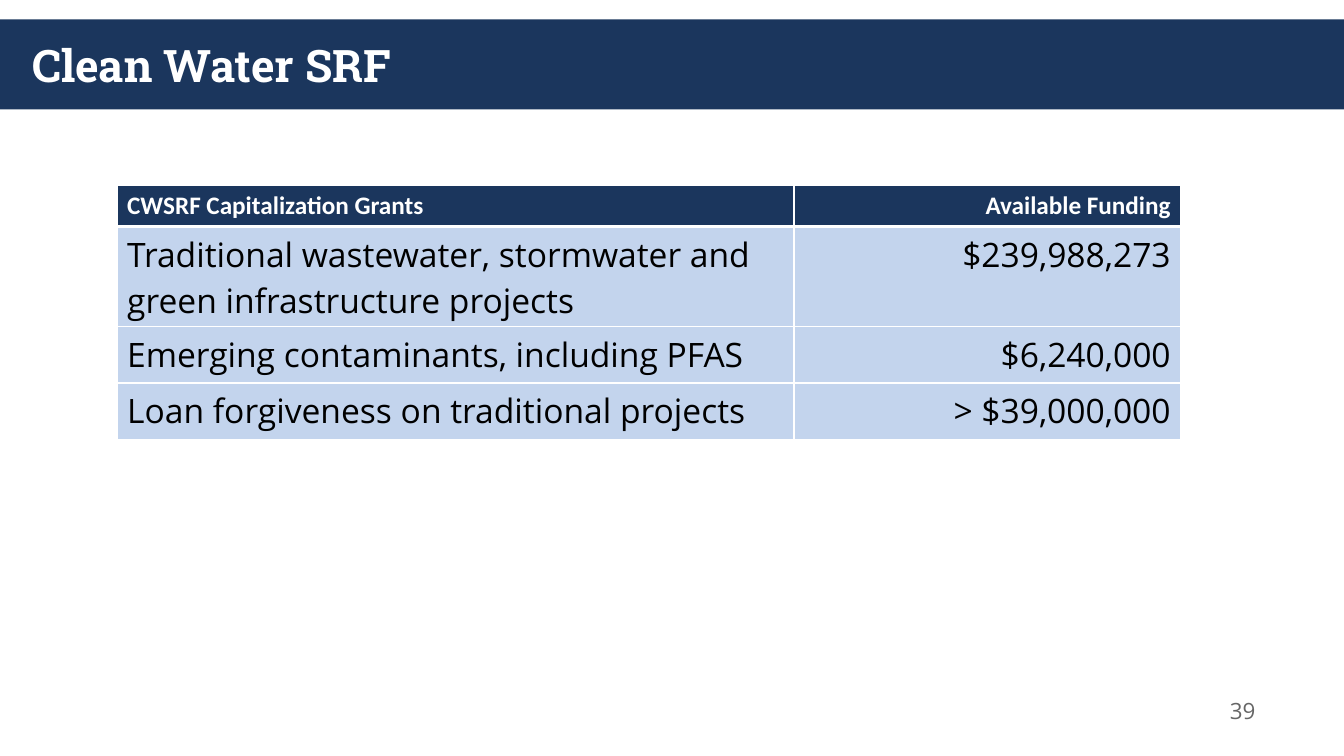
"""Build the Clean Water SRF funding slide."""
from lxml import etree
from pptx import Presentation
from pptx.dml.color import RGBColor
from pptx.enum.shapes import MSO_SHAPE
from pptx.enum.text import MSO_ANCHOR as ANCHOR, PP_ALIGN as ALIGN
from pptx.oxml.ns import qn
from pptx.util import Cm, Pt

COLORS = {"navy": "1B365D", "pale": "C3D4ED", "white": "FFFFFF",
          "black": "000000", "grey": "666666"}


def write(tf, text, size=24, font="Open Sans", color="black", bold=False,
          align=ALIGN.LEFT, anchor=ANCHOR.TOP):
    tf.word_wrap = True
    tf.vertical_anchor = anchor
    p = tf.paragraphs[0]
    p.alignment = align
    r = p.add_run()
    r.text = text
    r.font.size = Pt(size)
    r.font.name = font
    r.font.bold = bold
    r.font.color.rgb = RGBColor.from_string(COLORS[color])


def set_borders(cell, widths):
    tc_pr = cell._tc.get_or_add_tcPr()
    for i, (side, width) in enumerate(widths.items()):
        ln = etree.Element(qn("a:ln" + side), w=str(Pt(width)))
        fill = etree.SubElement(ln, qn("a:solidFill"))
        etree.SubElement(fill, qn("a:srgbClr"), val=COLORS["white"])
        tc_pr.insert(i, ln)


prs = Presentation()
prs.slide_width, prs.slide_height = Cm(33.87), Cm(19.05)
s = prs.slides.add_slide(prs.slide_layouts[6])

number = s.shapes.add_textbox(Cm(30.47), Cm(17.36), Cm(1.7), Cm(1.07))
write(number.text_frame, "39", size=16, color="grey", align=ALIGN.CENTER,
      anchor=ANCHOR.MIDDLE)

band = s.shapes.add_shape(MSO_SHAPE.RECTANGLE, 0, Cm(0.49), prs.slide_width, Cm(2.27))
band.shadow.inherit = False
band.fill.solid()
band.fill.fore_color.rgb = RGBColor.from_string(COLORS["navy"])
band.line.fill.background()

title = s.shapes.add_textbox(Cm(0.56), Cm(0.49), Cm(32.74), Cm(2.27))
write(title.text_frame, "Clean Water SRF", size=32, font="Roboto Slab",
      color="white", bold=True, anchor=ANCHOR.MIDDLE)

rows = [
    ("CWSRF Capitalization Grants", "Available Funding"),
    ("Traditional wastewater, stormwater and green infrastructure projects",
     "$239,988,273"),
    ("Emerging contaminants, including PFAS", "$6,240,000"),
    ("Loan forgiveness on traditional projects", "> $39,000,000"),
]
col_widths = [17.06, 9.75]
row_heights = [1.04, 2.52, 1.42, 1.42]
header_style = {"size": 18, "font": "Calibri", "color": "white", "bold": True}

table = s.shapes.add_table(len(rows), len(col_widths), Cm(2.95), Cm(4.67),
                           Cm(sum(col_widths)), Cm(sum(row_heights))).table
for column, width in zip(table.columns, col_widths):
    column.width = Cm(width)
for i, (texts, height) in enumerate(zip(rows, row_heights)):
    table.rows[i].height = Cm(height)
    header = i == 0
    for j, text in enumerate(texts):
        cell = table.cell(i, j)
        cell.fill.solid()
        cell.fill.fore_color.rgb = RGBColor.from_string(
            COLORS["navy" if header else "pale"])
        set_borders(cell, {"L": 1, "R": 1, "T": 3 if i == 1 else 1,
                           "B": 3 if header else 1})
        write(cell.text_frame, text, align=ALIGN.RIGHT if j else ALIGN.LEFT,
              **(header_style if header else {}))

prs.save("out.pptx")
